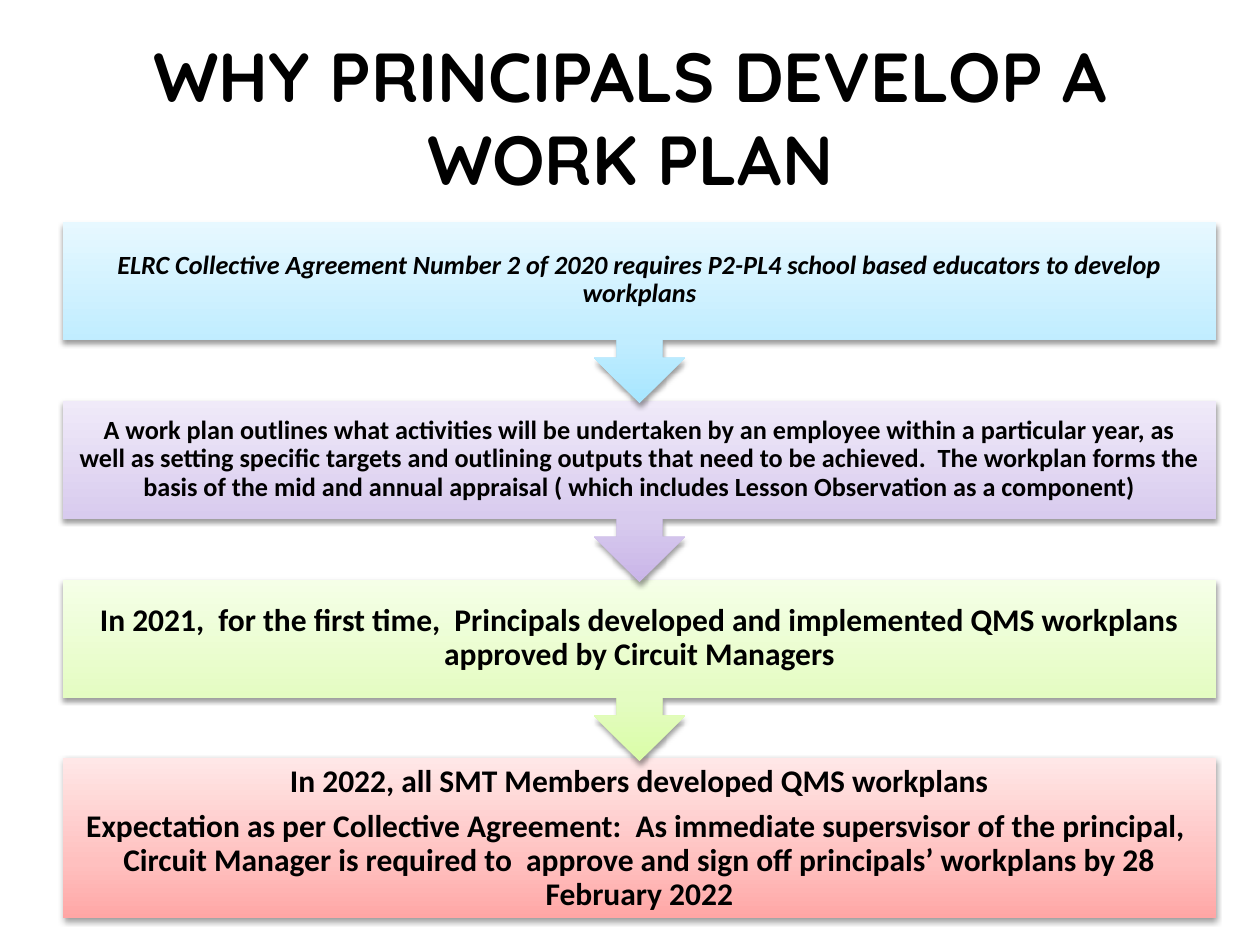
from lxml import etree
from pptx import Presentation
from pptx.dml.color import RGBColor
from pptx.enum.shapes import MSO_SHAPE
from pptx.enum.text import MSO_ANCHOR, PP_ALIGN
from pptx.oxml import parse_xml
from pptx.oxml.ns import nsdecls, qn
from pptx.util import Inches, Pt

CALLOUT, BLOCK = MSO_SHAPE.UP_ARROW_CALLOUT, MSO_SHAPE.RECTANGLE
MIDDLE, CENTER = MSO_ANCHOR.MIDDLE, PP_ALIGN.CENTER

# Content, from first step to last
TITLE = "WHY PRINCIPALS DEVELOP A WORK PLAN"
STEPS = [
    {"color": "blue", "size": 15, "italic": True, "text": [
        "ELRC Collective Agreement Number 2 of 2020 requires P2-PL4 school based "
        "educators to develop workplans"]},
    {"color": "purple", "size": 15, "italic": False, "text": [
        "A work plan outlines what activities will be undertaken by an employee "
        "within a particular year, as well as setting specific targets and outlining "
        "outputs that need to be achieved.  The workplan forms the basis of the mid "
        "and annual appraisal ( which includes Lesson Observation as a component)"]},
    {"color": "green", "size": 18, "italic": False, "text": [
        "In 2021,  for the first time,  Principals developed and implemented QMS "
        "workplans approved by Circuit Managers"]},
    {"color": "red", "size": 18, "italic": False, "text": [
        "In 2022, all SMT Members developed QMS workplans",
        "Expectation as per Collective Agreement:  As immediate supersvisor of the "
        "principal,  Circuit Manager is required to  approve and sign off principals’ "
        "workplans by 28 February 2022"]},
]

# Gradients run from the bottom edge up
COLORS = {"text": "000000", "shadow": "000000"}
GRADIENTS = {
    "blue": ("A7E6FF", "C1EDFF", "E7F8FF"),
    "purple": ("C9B5E8", "D8CBEE", "F0EAF9"),
    "green": ("DAFDA7", "E4FCC2", "F5FFE7"),
    "red": ("FFA6A5", "FFC0BF", "FFE7E7"),
}
STOPS = (0, 35, 100)

# Layout in inches
LEFT, TOP, WIDTH, PITCH = 0.5, 1.76, 9.15, 1.42
CALLOUT_HEIGHT, TEXT_HEIGHT, LAST_HEIGHT = 1.44, 0.93, 1.27


def set_font(font, name, size, italic=False):
    font.name, font.size, font.bold, font.italic = name, Pt(size), True, italic
    font.color.rgb = RGBColor.from_string(COLORS["text"])


def style_shape(shape, gradient):
    shape.fill.gradient()
    shape.line.fill.background()
    shape.shadow.inherit = False
    properties = shape._element.spPr
    stops = "".join(
        f'<a:gs pos="{stop * 1000}"><a:srgbClr val="{color}"/></a:gs>'
        for stop, color in zip(STOPS, gradient))
    properties.replace(properties.find(qn("a:gradFill")), parse_xml(
        f'<a:gradFill {nsdecls("a")} rotWithShape="0"><a:gsLst>{stops}</a:gsLst>'
        '<a:lin ang="16200000" scaled="0"/></a:gradFill>'))
    shadow = etree.SubElement(
        properties.find(qn("a:effectLst")), qn("a:outerShdw"),
        blurRad=str(Pt(3.1)), dist=str(Pt(1.6)), dir="5400000", rotWithShape="0")
    color = etree.SubElement(shadow, qn("a:srgbClr"), val=COLORS["shadow"])
    etree.SubElement(color, qn("a:alpha"), val="38000")


def add_step(slide, step, top, is_last):
    kind, height, text_height = (
        (BLOCK, LAST_HEIGHT, LAST_HEIGHT) if is_last
        else (CALLOUT, CALLOUT_HEIGHT, TEXT_HEIGHT))
    shape = slide.shapes.add_shape(
        kind, Inches(LEFT), Inches(top), Inches(WIDTH), Inches(height))
    shape.rotation = 0 if is_last else 180
    style_shape(shape, GRADIENTS[step["color"]])

    # Upright text over the body of the step
    frame = slide.shapes.add_textbox(
        Inches(LEFT), Inches(top), Inches(WIDTH), Inches(text_height)).text_frame
    frame.word_wrap = True
    frame.vertical_anchor = MIDDLE
    inset = Inches(0.14 if step["size"] == 18 else 0.12)
    frame.margin_left = frame.margin_right = inset
    frame.margin_top = frame.margin_bottom = inset
    frame.text = "\n".join(step["text"])
    for paragraph in frame.paragraphs:
        paragraph.alignment = CENTER
        paragraph.line_spacing = 0.9
        paragraph.space_after = Pt(0.35 * step["size"])
        set_font(paragraph.font, "Calibri", step["size"], step["italic"])


def main():
    presentation = Presentation()
    presentation.slide_width, presentation.slide_height = Inches(10), Inches(7.5)
    slide = presentation.slides.add_slide(presentation.slide_layouts[5])

    # Title
    title = slide.shapes.title
    title.left, title.top = Inches(0.5), Inches(0.3)
    title.width, title.height = Inches(9), Inches(1.25)
    title.text_frame.text = TITLE
    title.text_frame.vertical_anchor = MIDDLE
    paragraph = title.text_frame.paragraphs[0]
    paragraph.alignment = CENTER
    set_font(paragraph.font, "Quicksand", 39.6)

    # Steps, last one first so each arrow tip overlaps the step below it
    last = len(STEPS) - 1
    for index in range(last, -1, -1):
        add_step(slide, STEPS[index], TOP + index * PITCH, index == last)

    presentation.save("out.pptx")


if __name__ == "__main__":
    main()
